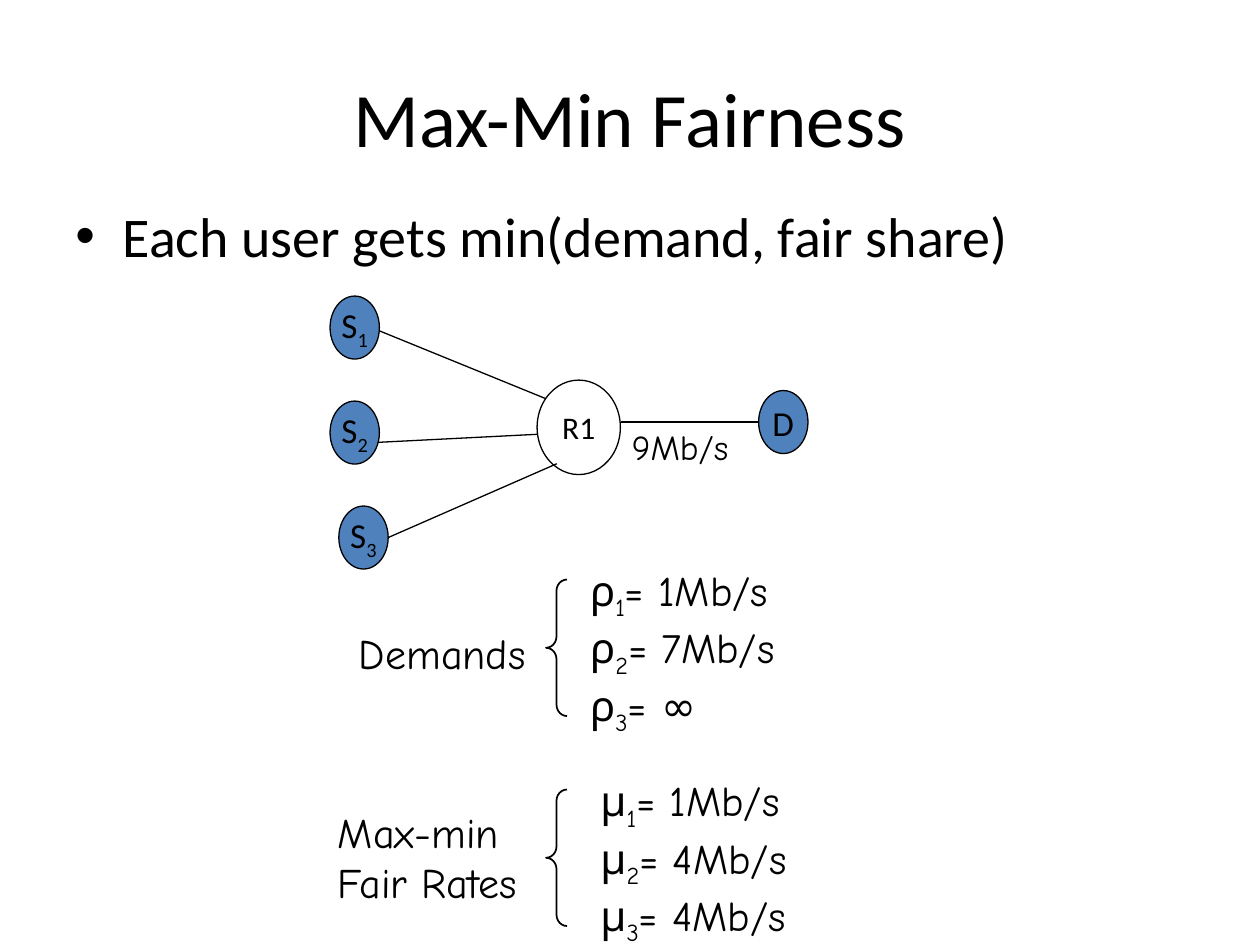
from lxml import etree
from pptx import Presentation
from pptx.dml.color import RGBColor
from pptx.enum.shapes import MSO_CONNECTOR, MSO_SHAPE
from pptx.enum.text import MSO_ANCHOR, PP_ALIGN
from pptx.oxml.ns import qn
from pptx.util import Pt

BLACK = RGBColor(0, 0, 0)
WHITE = RGBColor(255, 255, 255)
BLUE = RGBColor(0x4F, 0x81, 0xBD)
LINE = MSO_CONNECTOR.STRAIGHT
OVAL, BRACE = MSO_SHAPE.OVAL, MSO_SHAPE.LEFT_BRACE
MIDDLE, TOP = MSO_ANCHOR.MIDDLE, MSO_ANCHOR.TOP
CENTER, LEFT = PP_ALIGN.CENTER, PP_ALIGN.LEFT
SANS, HAND = "Calibri", "Comic Neue"

# Content; a text is a list of (main, subscript, rest) lines
TITLE = "Max-Min Fairness"
POINT = "Each user gets min(demand, fair share)"
SPEED = "9Mb/s"
HOST = (28.2, 36)
ROUTER = (47.6, 54)
NODES = [  # line, left, top, size, fill, font size
    (("S", "1", ""), 188.6, 169.2, HOST, BLUE, 20),
    (("S", "2", ""), 188.6, 229.2, HOST, BLUE, 20),
    (("S", "3", ""), 193.6, 289.2, HOST, BLUE, 20),
    (("R1", "", ""), 306.9, 217.2, ROUTER, WHITE, 18),
    (("D", "", ""), 433.5, 223.2, HOST, BLUE, 20),
]
BACK = [  # links behind the nodes
    (198, 181.4, 330.5, 235.4),
    (203.8, 253.4, 330.5, 247),
    (355, 241.2, 435.6, 241.2),
]
FRONT = [(221.8, 307.2, 318.2, 265)]
GROUPS = [  # label, label box, symbol, values, value box, wrap, brace top
    ("Demands", (198, 355, 120, 36), "ρ", ["1Mb/s", "7Mb/s", "∞"],
     (330, 319, 156, 165.6), True, 331.2),
    ("Max-min Fair Rates", (186, 457.2, 144, 65), "μ",
     ["1Mb/s", "4Mb/s", "4Mb/s"], (336, 439.2, 139, 93.6), False, 451.2),
]

deck = Presentation()
deck.slide_width, deck.slide_height = Pt(720), Pt(540)
slide = deck.slides.add_slide(deck.slide_layouts[5])
shapes = slide.shapes


def write(shape, lines, size, face, align=LEFT, anchor=TOP, wrap=True):
    frame = shape.text_frame
    frame.word_wrap = wrap
    frame.vertical_anchor = anchor
    for i, parts in enumerate(lines):
        para = frame.add_paragraph() if i else frame.paragraphs[0]
        para.alignment = align
        font = para.font
        font.size, font.name, font.color.rgb = Pt(size), face, BLACK
        for j, text in enumerate(parts):
            if text:
                run = para.add_run()
                run.text = text
                if j == 1:
                    run._r.get_or_add_rPr().set("baseline", "-25000")
    return frame


def box(rect, *args, **opts):
    return write(shapes.add_textbox(*map(Pt, rect)), *args, **opts)


def draw(kind, rect, width, fill=None):
    shape = shapes.add_shape(kind, *map(Pt, rect))
    shape.shadow.inherit = False
    if fill is None:
        shape.fill.background()
    else:
        shape.fill.solid()
        shape.fill.fore_color.rgb = fill
    shape.line.color.rgb, shape.line.width = BLACK, Pt(width)
    return shape


def link(ends):
    line = shapes.add_connector(LINE, *map(Pt, ends))
    line.line.color.rgb, line.line.width = BLACK, Pt(0.75)
    etree.SubElement(line._element.spPr, qn("a:effectLst"))


# Title and bullet
head = shapes.title
head.left, head.top, head.width, head.height = map(Pt, (36, 21.6, 648, 90))
write(head, [(TITLE,)], 44, SANS, CENTER, MIDDLE)
body = box((36, 111.6, 648, 356.4), [(POINT,)], 32, SANS)
props = body.paragraphs[0]._p.get_or_add_pPr()
props.set("marL", str(Pt(27)))
props.set("indent", str(-Pt(27)))
mark = etree.Element(qn("a:buChar"), char="•")
face = etree.Element(qn("a:buFont"), typeface="Arial")
props.insert(0, face)
props.insert(1, mark)

# Network
for ends in BACK:
    link(ends)
for text, left, top, size, fill, points in NODES:
    node = draw(OVAL, (left, top, *size), 0.75, fill)
    write(node, [text], points, SANS, CENTER, MIDDLE, False)
for ends in FRONT:
    link(ends)
box((350.6, 239.8, 76.3, 31.5), [(SPEED,)], 20, HAND, CENTER, wrap=False)

# Demands and rates
for label, spot, sign, values, area, wrap, top in GROUPS:
    rows = [(sign, str(n), "= " + v) for n, v in enumerate(values, 1)]
    box(area, rows, 24, HAND, wrap=wrap)
    brace = draw(BRACE, (312, top, 12, 78), 1)
    brace.adjustments[0] = 0.54
    box(spot, [(label,)], 24, HAND)

deck.save("out.pptx")
